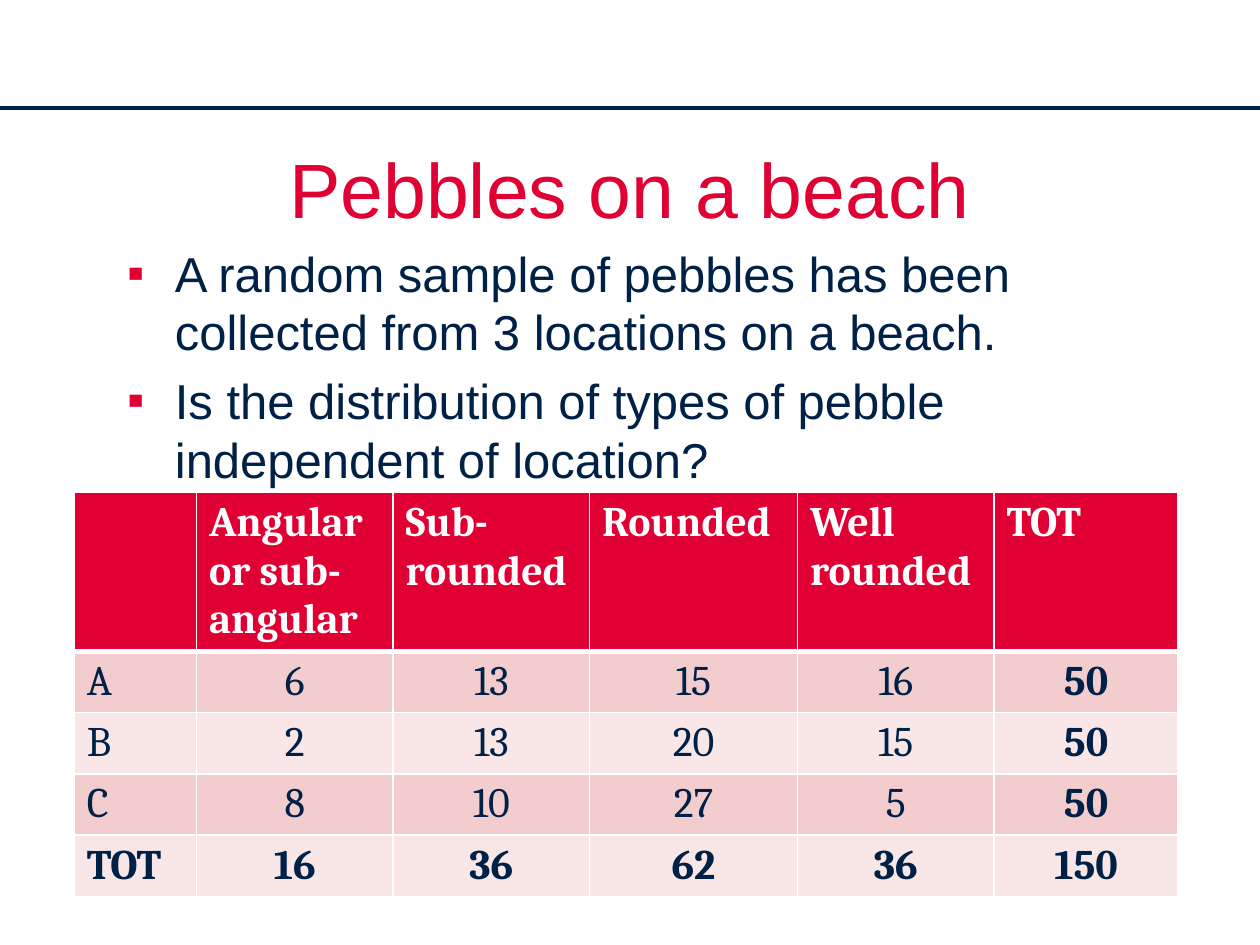
from lxml import etree
from pptx import Presentation
from pptx.dml.color import RGBColor
from pptx.enum.shapes import MSO_CONNECTOR
from pptx.enum.text import MSO_ANCHOR, PP_ALIGN
from pptx.oxml import parse_xml
from pptx.oxml.ns import nsdecls, qn
from pptx.util import Inches, Pt

COLORS = {
    "navy": "002147",
    "red": "E00034",
    "white": "FFFFFF",
    "dark": "F3CCCE",
    "pale": "F9E7E8",
}
SIDES = ("L", "R", "T", "B")


def rgb(name):
    return RGBColor.from_string(COLORS[name])


class Deck:
    """Holds the style and the current slide."""

    sans, serif = "Arial", "Cambria"

    def __init__(self, slide):
        self.slide = slide

    def style(self, para, face, size, color, bold=False):
        font = para.font
        font.name, font.size, font.bold = face, Pt(size), bold
        font.color.rgb = rgb(color)

    def rule(self, y, width):
        line = self.slide.shapes.add_connector(
            MSO_CONNECTOR.STRAIGHT, Inches(0), Inches(y), Inches(10), Inches(y))
        line.line.color.rgb = rgb("navy")
        line.line.width = Pt(width)
        etree.SubElement(line._element.spPr, qn("a:effectLst"))

    def box(self, x, y, w, h):
        frame = self.slide.shapes.add_textbox(
            Inches(x), Inches(y), Inches(w), Inches(h)).text_frame
        frame.word_wrap = True
        return frame

    def title(self, text, *place):
        frame = self.box(*place)
        frame.vertical_anchor = MSO_ANCHOR.MIDDLE
        para = frame.paragraphs[0]
        para.text = text
        para.alignment = PP_ALIGN.CENTER
        self.style(para, self.sans, 44, "red")

    def bullets(self, items, *place):
        frame = self.box(*place)
        for i, text in enumerate(items):
            para = frame.add_paragraph() if i else frame.paragraphs[0]
            para.text = text
            if i:
                para.space_before = Pt(5.6)
            props = para._p.get_or_add_pPr()
            props.set("marL", str(Inches(0.38)))
            props.set("indent", str(-Inches(0.38)))
            for mark in (
                f'<a:buClr {nsdecls("a")}><a:srgbClr val="{COLORS["red"]}"/></a:buClr>',
                f'<a:buFont {nsdecls("a")} typeface="{self.sans}"/>',
                f'<a:buChar {nsdecls("a")} char="▪"/>',
            ):
                props.append(parse_xml(mark))
            self.style(para, self.sans, 28, "navy")

    def border(self, cell, base):
        props = cell._tc.get_or_add_tcPr()
        for i, side in enumerate(SIDES):
            width = base if side == "B" else Pt(1)
            props.insert(i, parse_xml(
                f'<a:ln{side} {nsdecls("a")} w="{width}"><a:solidFill>'
                f'<a:srgbClr val="{COLORS["white"]}"/></a:solidFill></a:ln{side}>'))
        # The lower border takes its room from the cell margin
        cell.margin_bottom = Inches(0.05) - base

    def table(self, rows, widths, x, y, high):
        grid = self.slide.shapes.add_table(
            len(rows), len(widths), Inches(x), Inches(y),
            Inches(sum(widths)), Inches(high * len(rows))).table
        for col, width in zip(grid.columns, widths):
            col.width = Inches(width)
        for r, row in enumerate(rows):
            for c, text in enumerate(row):
                cell = grid.cell(r, c)
                head = r == 0
                cell.fill.solid()
                cell.fill.fore_color.rgb = rgb(
                    "red" if head else "dark" if r % 2 else "pale")
                self.border(cell, Pt(3 if head else 1))
                para = cell.text_frame.paragraphs[0]
                para.text = str(text)
                if c and not head:
                    para.alignment = PP_ALIGN.CENTER
                # Header and totals are bold
                bold = head or r == len(rows) - 1 or c == len(row) - 1
                self.style(para, self.serif, 24, "white" if head else "navy", bold)


def main():
    show = Presentation()
    show.slide_width, show.slide_height = Inches(10), Inches(7.5)
    deck = Deck(show.slides.add_slide(show.slide_layouts[6]))

    # Top rule
    deck.rule(0.86, 2.25)

    # Question
    deck.bullets([
        "A random sample of pebbles has been collected from 3 locations on a beach.",
        "Is the distribution of types of pebble independent of location?",
    ], 0.91, 1.88, 8.75, 2.14)
    deck.title("Pebbles on a beach", 0.5, 1.07, 9, 0.84)

    # Counts by location and type
    deck.table([
        ["", "Angular or sub- angular", "Sub-rounded", "Rounded", "Well rounded", "TOT"],
        ["A", 6, 13, 15, 16, 50],
        ["B", 2, 13, 20, 15, 50],
        ["C", 8, 10, 27, 5, 50],
        ["TOT", 16, 36, 62, 36, 150],
    ], [0.97, 1.56, 1.56, 1.65, 1.56, 1.46], 0.59, 3.91, 0.41)

    show.save("out.pptx")


if __name__ == "__main__":
    main()
